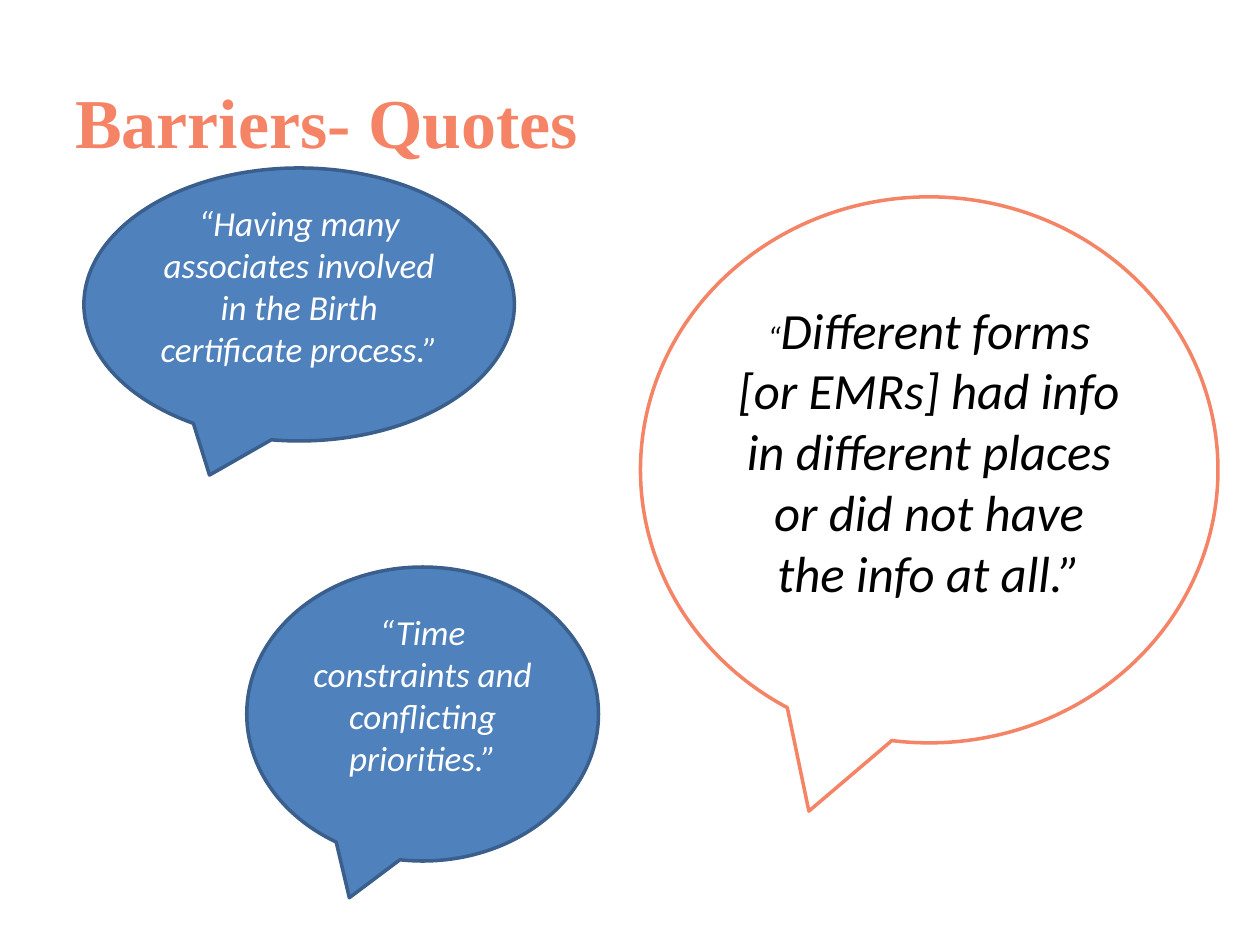
from pptx import Presentation
from pptx.dml.color import RGBColor
from pptx.enum.shapes import MSO_SHAPE
from pptx.enum.text import MSO_ANCHOR, PP_ALIGN
from pptx.util import Pt

CORAL = "F58466"
BLUE = "4F81BD"
NAVY = "3A5F8C"
WHITE = "FFFFFF"
BLACK = "000000"


def color(value):
    return RGBColor.from_string(value)


def add_text(paragraph, text, *, size, ink, font="Calibri", bold=False, italic=False):
    run = paragraph.add_run()
    run.text = text
    run.font.name = font
    run.font.size = Pt(size)
    run.font.bold = bold
    run.font.italic = italic
    run.font.color.rgb = color(ink)


def prepare_frame(frame, align, bottom=3.6):
    frame.word_wrap = True
    frame.vertical_anchor = MSO_ANCHOR.MIDDLE
    frame.margin_bottom = Pt(bottom)
    paragraph = frame.paragraphs[0]
    paragraph.alignment = align
    return paragraph


def add_heading(slide, box, text):
    heading = slide.shapes.add_textbox(*map(Pt, box))
    paragraph = prepare_frame(heading.text_frame, PP_ALIGN.LEFT)
    add_text(paragraph, text, size=40, ink=CORAL, font="Times New Roman", bold=True)


def add_quote(slide, box, pieces, fill=BLUE, border=NAVY, ink=WHITE):
    bubble = slide.shapes.add_shape(MSO_SHAPE.OVAL_CALLOUT, *map(Pt, box))
    bubble.shadow.inherit = False
    bubble.fill.solid()
    bubble.fill.fore_color.rgb = color(fill)
    bubble.line.color.rgb = color(border)
    bubble.line.width = Pt(2)
    paragraph = prepare_frame(bubble.text_frame, PP_ALIGN.CENTER, bottom=25.6)
    for text, size in pieces:
        add_text(paragraph, text, size=size, ink=ink, italic=True)


def main():
    deck = Presentation()
    deck.slide_width, deck.slide_height = Pt(720), Pt(540)
    slide = deck.slides.add_slide(deck.slide_layouts[6])

    add_heading(slide, (36, 24, 648, 90), "Barriers- Quotes")
    add_quote(slide, (48, 96, 246, 156),
              [("“Having many associates involved in the Birth certificate process.”", 20)])
    add_quote(slide, (141, 324, 201, 168),
              [("“Time constraints and conflicting priorities.”", 20)])
    add_quote(slide, (366, 112.5, 330, 312),
              [("“", 18),
               ("Different forms [or EMRs] had info in different places "
                "or did not have the info at all.”", 29)],
              fill=WHITE, border=CORAL, ink=BLACK)

    deck.save("out.pptx")


if __name__ == "__main__":
    main()
